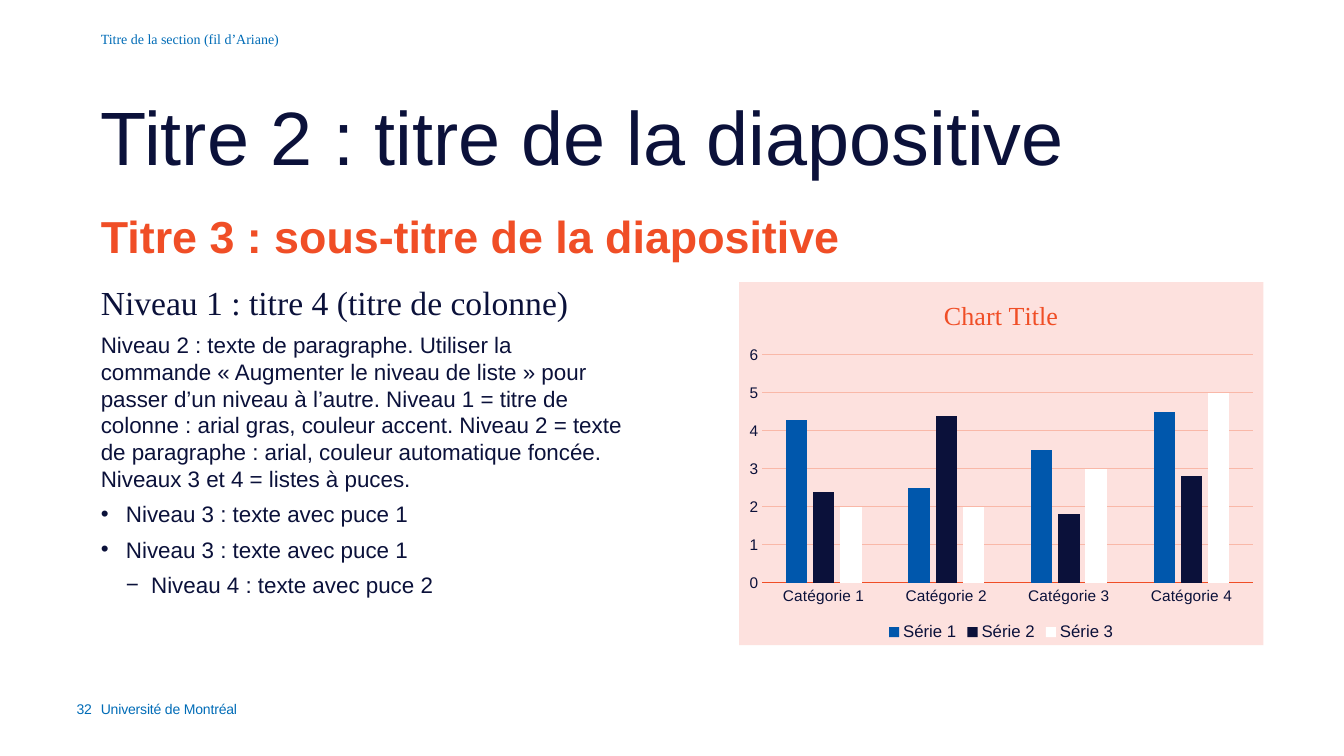
from lxml import etree
from pptx import Presentation
from pptx.chart import data as cd
from pptx.dml.color import RGBColor
from pptx.enum import chart as ch, text as tx
from pptx.oxml import parse_xml
from pptx.oxml.ns import nsdecls, qn
from pptx.util import Inches, Pt

NAVY = RGBColor(0x0B, 0x11, 0x3A)
BLUE = RGBColor(0x00, 0x6C, 0xB7)
ROYAL = RGBColor(0x00, 0x57, 0xAC)
ORANGE = RGBColor(0xF0, 0x4E, 0x26)
PEACH = RGBColor(0xF9, 0xB8, 0xA8)
PINK = RGBColor(0xFD, 0xE1, 0xDE)
WHITE = RGBColor(0xFF, 0xFF, 0xFF)
SANS, SERIF = "Arial", "Times New Roman"

INTRO = (
    "Niveau 2 : texte de paragraphe. Utiliser la commande "
    "« Augmenter le niveau de liste » pour passer d’un niveau à l’autre. "
    "Niveau 1 = titre de colonne : arial gras, couleur accent. "
    "Niveau 2 = texte de paragraphe : arial, couleur automatique foncée. "
    "Niveaux 3 et 4 = listes à puces."
)
CATS = [f"Catégorie {n}" for n in range(1, 5)]
SERIES = [
    ("Série 1", (4.3, 2.5, 3.5, 4.5), ROYAL),
    ("Série 2", (2.4, 4.4, 1.8, 2.8), NAVY),
    ("Série 3", (2, 2, 3, 5), WHITE),
]


def set_font(font, size, color=NAVY, name=SANS, bold=False):
    font.size, font.name, font.bold = Pt(size), name, bold
    font.color.rgb = color


def add_box(slide, left, top, width, height, anchor=tx.MSO_ANCHOR.TOP):
    box = slide.shapes.add_textbox(*map(Inches, (left, top, width, height)))
    frame = box.text_frame
    frame.word_wrap = True
    frame.vertical_anchor = anchor
    frame.margin_left = frame.margin_right = 0
    frame.margin_top = frame.margin_bottom = 0
    return frame


def add_text(frame, words, size, color=NAVY, name=SANS, bold=False, level=0,
             left=0, hang=0, bullet=None, after=0, line=None, align=None,
             track=None):
    """Fill the first paragraph if it is empty, else add one."""
    para = frame.paragraphs[0]
    if para.runs:
        para = frame.add_paragraph()
    para.level = level
    props = para._p.get_or_add_pPr()
    props.set("marL", str(Inches(left)))
    props.set("indent", str(-Inches(hang)))
    para.space_before, para.space_after = Pt(0), Pt(after)
    para.line_spacing, para.alignment = line, align
    if bullet:
        etree.SubElement(props, qn("a:buFont")).set("typeface", SANS)
        etree.SubElement(props, qn("a:buChar")).set("char", bullet)
    run = para.add_run()
    run.text = words
    set_font(run.font, size, color, name, bold)
    if track:
        run._r.get_or_add_rPr().set("spc", str(round(track * 100)))


def paint_line(line, color):
    line.color.rgb = color
    line.width = Pt(0.75)


def add_bars(slide, left, top, width, height):
    data = cd.CategoryChartData()
    data.categories = CATS
    for name, vals, _ in SERIES:
        data.add_series(name, vals)
    chart = slide.shapes.add_chart(
        ch.XL_CHART_TYPE.COLUMN_CLUSTERED,
        *map(Inches, (left, top, width, height)), data).chart
    set_font(chart.font, 10)

    chart.has_title = True
    title = chart.chart_title.text_frame
    title.text = "Chart Title"
    set_font(title.paragraphs[0].runs[0].font, 18.6, ORANGE, SERIF)
    chart.chart_title.include_in_layout = False

    chart.has_legend = True
    chart.legend.position = ch.XL_LEGEND_POSITION.BOTTOM
    chart.legend.include_in_layout = False
    set_font(chart.legend.font, 12)

    plot = chart.plots[0]
    plot.gap_width, plot.overlap = 219, -27
    plot.vary_by_categories = False
    for bars, (_, _, color) in zip(plot.series, SERIES):
        bars.format.fill.solid()
        bars.format.fill.fore_color.rgb = color
        bars.invert_if_negative = False

    for axis in (chart.category_axis, chart.value_axis):
        axis.major_tick_mark = axis.minor_tick_mark = ch.XL_TICK_MARK.NONE
        set_font(axis.tick_labels.font, 11)
    paint_line(chart.category_axis.format.line, ORANGE)
    values = chart.value_axis
    values.format.line.fill.background()
    values.minimum_scale, values.maximum_scale, values.major_unit = 0, 6, 1
    paint_line(values.major_gridlines.format.line, PEACH)

    back = parse_xml(
        f'<c:spPr {nsdecls("c", "a")}><a:solidFill><a:srgbClr val="{PINK}"/>'
        '</a:solidFill><a:ln><a:noFill/></a:ln></c:spPr>')
    chart._chartSpace.find(qn("c:chart")).addnext(back)


def add_body(slide):
    body = add_box(slide, 1, 2.8, 5.2, 3.6)
    add_text(body, "Niveau 1 : titre 4 (titre de colonne)", 24,
             name=SERIF, after=6)
    add_text(body, INTRO, 16, level=1, after=6)
    for _ in range(2):
        add_text(body, "Niveau 3 : texte avec puce 1", 16, level=2,
                 left=0.25, hang=0.25, bullet="•", after=6)
    add_text(body, "Niveau 4 : texte avec puce 2", 16, level=3,
             left=0.5, hang=0.25, bullet="−", after=5)


def main():
    deck = Presentation()
    deck.slide_width, deck.slide_height = Inches(13.33), Inches(7.5)
    slide = deck.slides.add_slide(deck.slide_layouts[6])

    add_text(add_box(slide, 1, 6.95, 7.88, 0.4), "Université de Montréal",
             10, BLUE, track=-0.1)
    add_bars(slide, 7.33, 2.8, 5.2, 3.6)
    add_body(slide)
    add_text(add_box(slide, 1, 1.88, 10.99, 0.73, tx.MSO_ANCHOR.BOTTOM),
             "Titre 3 : sous-titre de la diapositive", 32, ORANGE,
             bold=True, line=0.9)
    add_text(add_box(slide, 1, 0.94, 11.5, 0.91, tx.MSO_ANCHOR.MIDDLE),
             "Titre 2 : titre de la diapositive", 54, line=0.9)
    add_text(add_box(slide, 1, 0.3, 4.84, 0.45),
             "Titre de la section (fil d’Ariane)", 10, BLUE, SERIF)
    add_text(add_box(slide, 0.5, 6.95, 0.45, 0.4), "32", 10, BLUE,
             left=0.22, align=tx.PP_ALIGN.CENTER, track=-0.1)
    deck.save("out.pptx")


if __name__ == "__main__":
    main()
